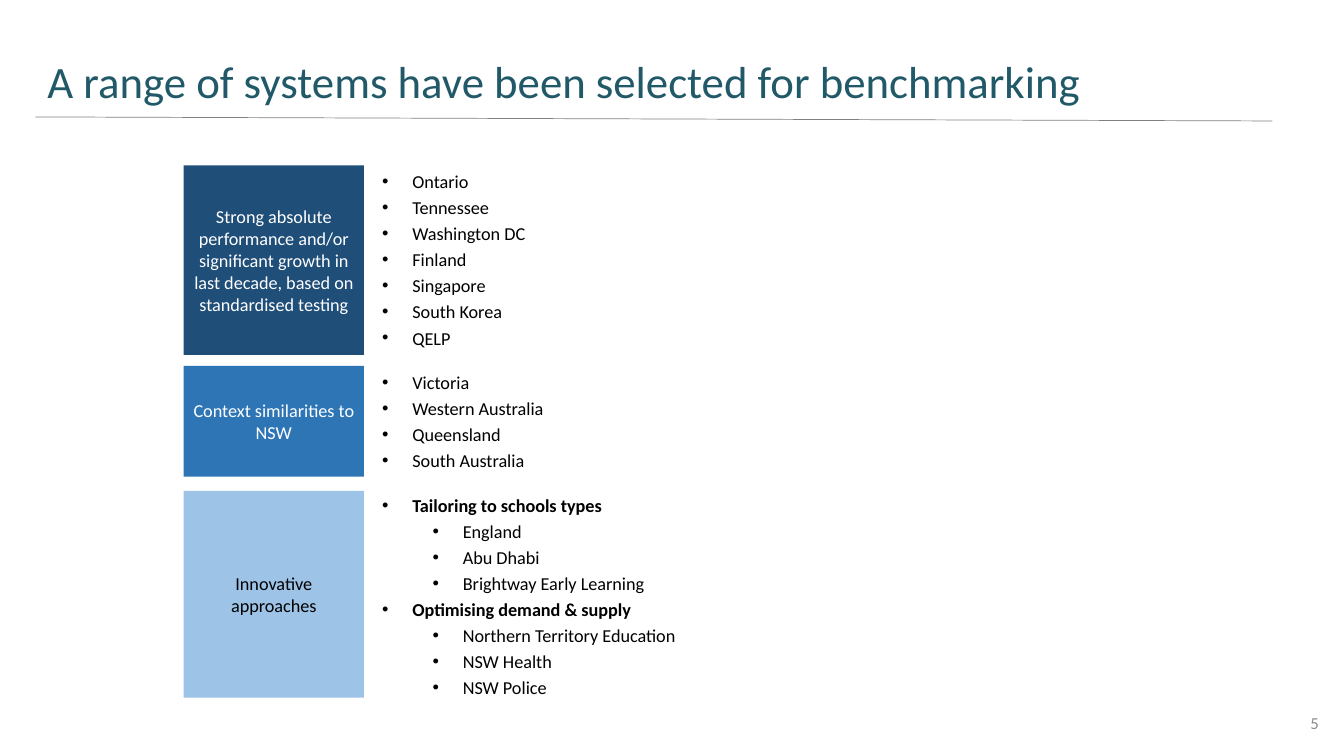
import dataclasses

import pptx
import pptx.dml.color
import pptx.enum.shapes
import pptx.enum.text
import pptx.oxml.ns
import pptx.util
from lxml import etree

PX = 9144
ALIGN = pptx.enum.text.PP_ALIGN
ANCHOR = pptx.enum.text.MSO_ANCHOR


@dataclasses.dataclass(frozen=True)
class Theme:
    font: str = "Calibri"
    title_size: int = 32
    body_size: int = 13
    number_size: int = 12
    title: str = "215968"
    ink: str = "000000"
    light: str = "FFFFFF"
    rule: str = "808080"
    number: str = "8C8C8C"
    strong: str = "1F4E79"
    similar: str = "2E75B6"
    innovative: str = "9DC3E6"


THEME = Theme()
LABEL_LEFT, LABEL_WIDTH, LIST_LEFT = 182, 179, 369
INDENT, INDENT_STEP = 30, 50

GROUPS = [
    {
        "label": "Strong absolute performance and/or significant growth in last decade, "
                 "based on standardised testing",
        "fill": THEME.strong, "ink": THEME.light,
        "label_span": (164, 188), "list_box": (164, 440, 188), "placeholder": 2,
        "items": [(name, 1) for name in (
            "Ontario", "Tennessee", "Washington DC", "Finland",
            "Singapore", "South Korea", "QELP")],
    },
    {
        "label": "Context similarities to NSW",
        "fill": THEME.similar, "ink": THEME.light,
        "label_span": (363, 110), "list_box": (363, 270, 110), "placeholder": 4,
        "items": [(name, 1) for name in (
            "Victoria", "Western Australia", "Queensland", "South Australia")],
    },
    {
        "label": "Innovative approaches",
        "fill": THEME.innovative, "ink": THEME.ink,
        "label_span": (487, 205), "list_box": (485, 371, 241), "placeholder": 1,
        "items": [
            ("Tailoring to schools types", 1),
            ("England", 2), ("Abu Dhabi", 2), ("Brightway Early Learning", 2),
            ("Optimising demand & supply", 1),
            ("Northern Territory Education", 2), ("NSW Health", 2), ("NSW Police", 2),
        ],
    },
]


def px(*lengths):
    return [pptx.util.Emu(length * PX) for length in lengths]


def rgb(value):
    return pptx.dml.color.RGBColor.from_string(value)


def place(box, left, top, width, height):
    box.left, box.top, box.width, box.height = px(left, top, width, height)


def prepare_frame(box, anchor):
    frame = box.text_frame
    frame.word_wrap = True
    frame.auto_size = pptx.enum.text.MSO_AUTO_SIZE.NONE
    frame.vertical_anchor = anchor
    return frame


def add_span(para, text, size, color, bold=False):
    span = para.add_run()
    span.text = text
    span.font.name = THEME.font
    span.font.size = pptx.util.Pt(size)
    span.font.bold = bold
    span.font.color.rgb = rgb(color)


def write_line(box, text, size, color, align, anchor):
    para = prepare_frame(box, anchor).paragraphs[0]
    para.alignment = align
    add_span(para, text, size, color)


def add_rule(page, start, end):
    rule = page.shapes.add_connector(
        pptx.enum.shapes.MSO_CONNECTOR.STRAIGHT, *px(*start, *end))
    rule.line.color.rgb = rgb(THEME.rule)
    rule.line.width = pptx.util.Pt(0.5)
    etree.SubElement(rule._element.spPr, pptx.oxml.ns.qn("a:effectLst"))


def add_label(page, group):
    top, height = group["label_span"]
    box = page.shapes.add_shape(
        pptx.enum.shapes.MSO_SHAPE.RECTANGLE, *px(LABEL_LEFT, top, LABEL_WIDTH, height))
    box.shadow.inherit = False
    box.fill.solid()
    box.fill.fore_color.rgb = rgb(group["fill"])
    box.line.fill.background()
    write_line(box, group["label"], THEME.body_size, group["ink"], ALIGN.CENTER, ANCHOR.MIDDLE)


def set_bullet(para, level):
    para.level = level
    properties = para._p.get_or_add_pPr()
    properties.set("marL", str((INDENT + INDENT_STEP * (level - 1)) * PX))
    properties.set("indent", str(-INDENT * PX))
    etree.SubElement(properties, pptx.oxml.ns.qn("a:buFont"), typeface="Arial")
    etree.SubElement(properties, pptx.oxml.ns.qn("a:buChar"), char="•")


def fill_list(box, group):
    top, width, height = group["list_box"]
    place(box, LIST_LEFT, top, width, height)
    frame = prepare_frame(box, ANCHOR.TOP)
    has_sublists = any(level > 1 for _, level in group["items"])
    for index, (text, level) in enumerate(group["items"]):
        para = frame.add_paragraph() if index else frame.paragraphs[0]
        set_bullet(para, level)
        para.alignment = ALIGN.LEFT
        para.space_before = pptx.util.Pt(0)
        para.space_after = pptx.util.Pt(3)
        add_span(para, text, THEME.body_size, THEME.ink, has_sublists and level == 1)


def remove_empty_placeholders(page):
    for box in list(page.placeholders):
        if not box.text_frame.text:
            box._element.getparent().remove(box._element)


def main():
    deck = pptx.Presentation()
    deck.slide_width, deck.slide_height = px(1333, 750)
    page = deck.slides.add_slide(deck.slide_layouts.get_by_name("Comparison"))
    title = page.shapes.title
    place(title, 37, 48, 1081, 64)
    write_line(title, "A range of systems have been selected for benchmarking",
               THEME.title_size, THEME.title, ALIGN.LEFT, ANCHOR.TOP)
    add_rule(page, (35, 116), (1262, 120))
    bodies = {box.placeholder_format.idx: box for box in page.placeholders}
    for group in GROUPS:
        fill_list(bodies[group["placeholder"]], group)
        add_label(page, group)
    remove_empty_placeholders(page)
    number = page.shapes.add_textbox(*px(1018, 697, 300, 40))
    write_line(number, "5", THEME.number_size, THEME.number, ALIGN.RIGHT, ANCHOR.MIDDLE)
    deck.save("out.pptx")


if __name__ == "__main__":
    main()
